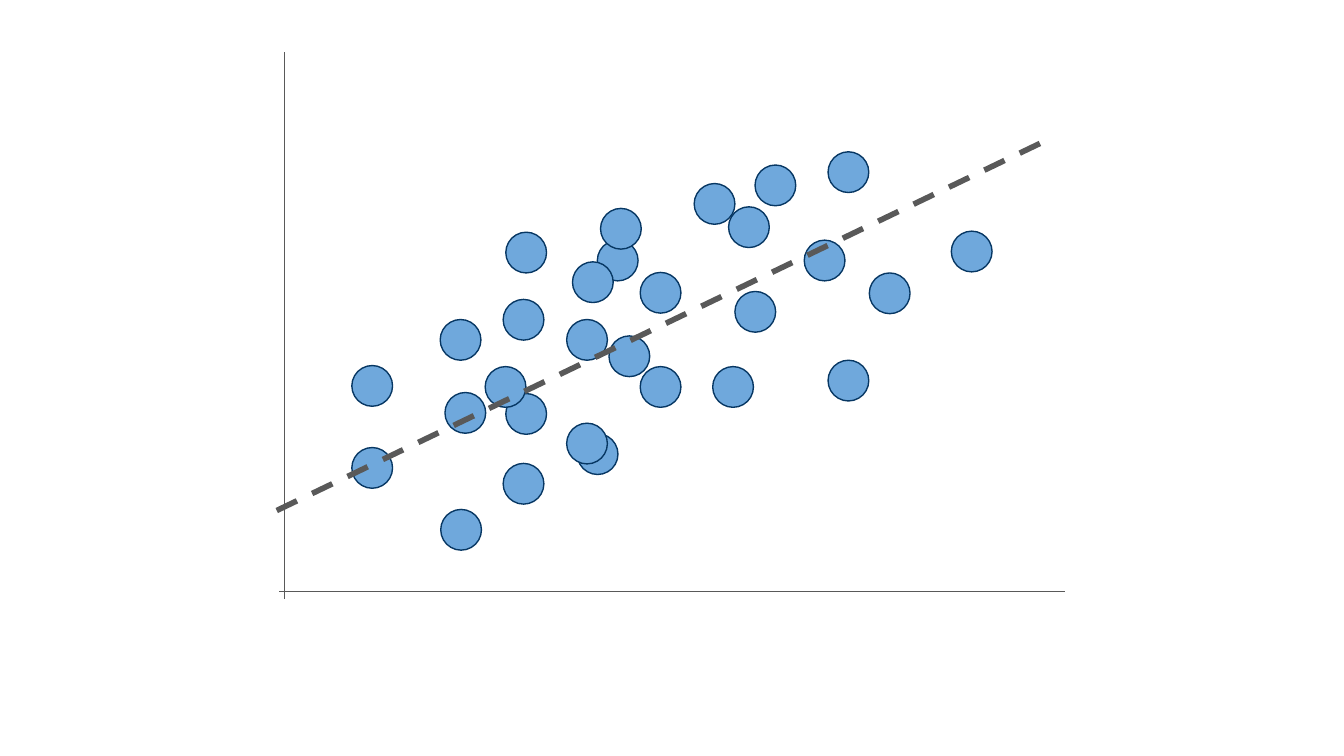
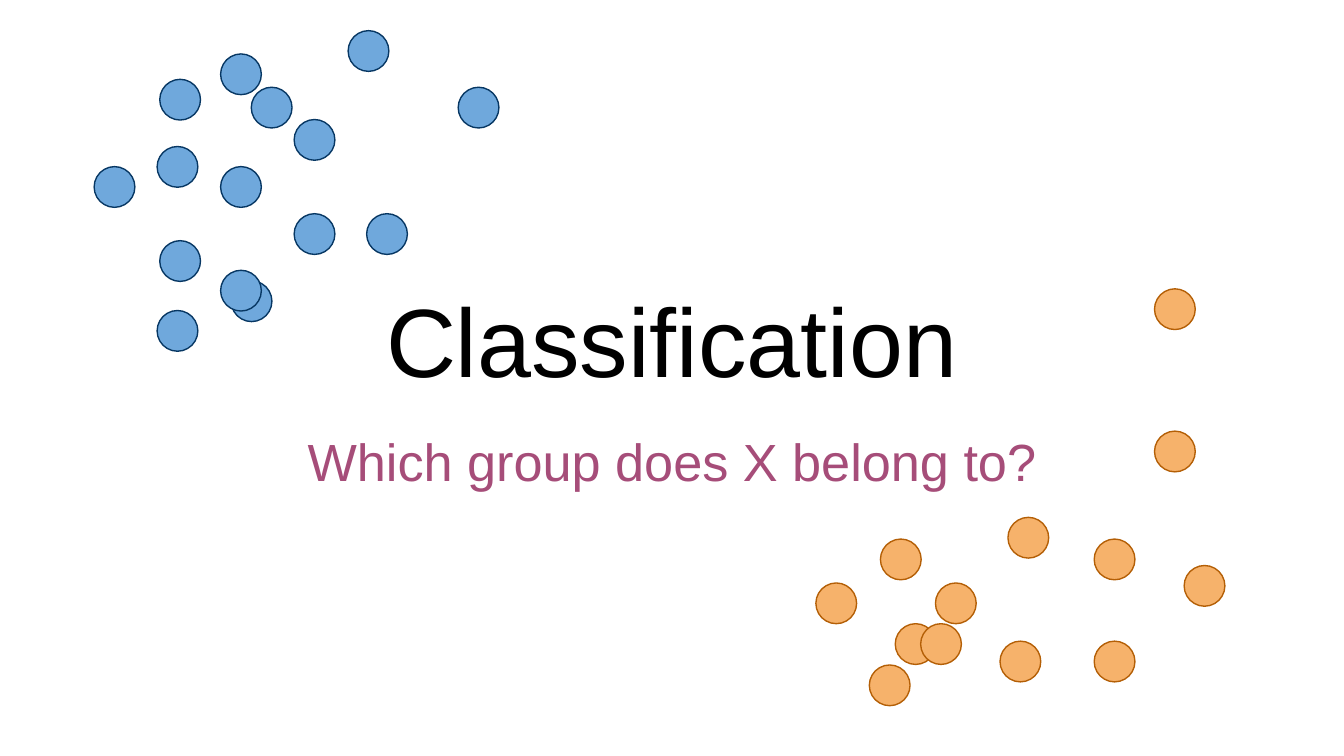
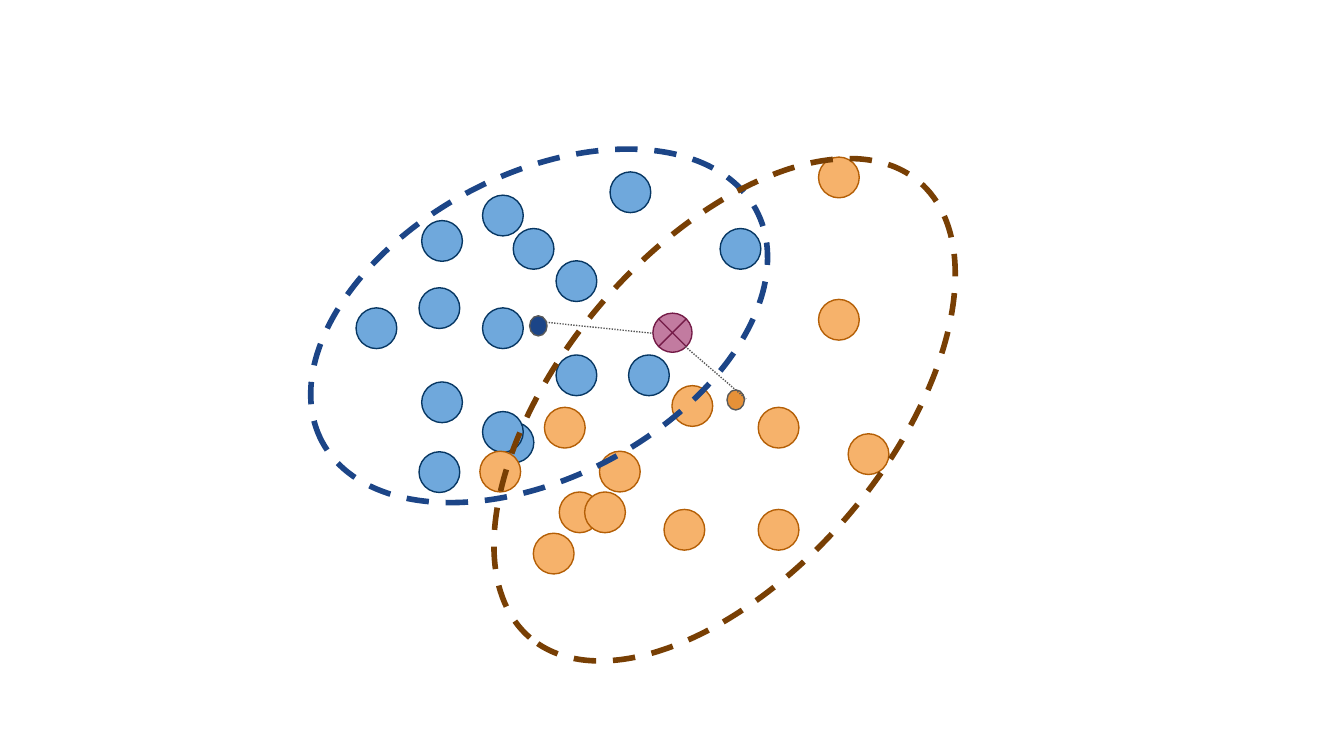
"""Build three slides on regression and classification with dot clusters."""
from lxml import etree
from pptx import Presentation
from pptx.dml.color import RGBColor
from pptx.enum import dml, shapes, text
from pptx.oxml import ns
from pptx.util import Cm, Pt

COLORS = {
    "blue": "6FA8DC", "blue_line": "073763", "navy": "1C4587",
    "orange": "F6B26B", "orange_line": "B45F06", "amber": "E69138", "brown": "783F04",
    "pink": "C27BA0", "pink_line": "741B47", "plum": "A64D79",
    "gray": "595959", "black": "000000",
}
RGB = {name: RGBColor.from_string(value) for name, value in COLORS.items()}
FONT = "Arial"
DOT = 0.77
DASH = dml.MSO_LINE.DASH
DOTTED = dml.MSO_LINE.ROUND_DOT
OVAL = shapes.MSO_SHAPE.OVAL

BLUE_DOTS = [
    (3.02, 1.5), (4.17, 3.15), (1.78, 3.15), (3.02, 4.55), (4.75, 1.65),
    (2.97, 2.77), (5.56, 4.04), (6.93, 4.04), (4.37, 5.31), (2.97, 5.87),
    (4.17, 5.11), (5.56, 2.26), (6.58, 0.58), (8.66, 1.65), (4.17, 1.02),
]
ORANGE_DOTS = [
    (15.42, 11.02), (16.92, 11.79), (16.64, 10.19), (16.43, 12.57), (17.4, 11.79),
    (17.68, 11.02), (19.05, 9.78), (18.9, 12.12), (20.68, 10.19), (20.68, 12.12),
    (21.82, 5.46), (21.82, 8.15), (22.38, 10.69),
]
TREND_DOTS = [
    (8.33, 9.63), (13.89, 5.51), (14.27, 3.12), (16.43, 5.16), (17.98, 4.37),
    (15.65, 2.87), (6.65, 6.91), (8.41, 7.42), (6.65, 8.46), (9.17, 6.93),
    (13.77, 3.91), (15.65, 6.81), (11.51, 6.35), (10.82, 4.95), (11.35, 3.94),
]


def add_mark(parent, kind, x, y, w, h, fill, line, width=0.75):
    sp = parent.add_shape(kind, Cm(x), Cm(y), Cm(w), Cm(h))
    sp.shadow.inherit = False
    if fill:
        sp.fill.solid()
        sp.fill.fore_color.rgb = RGB[fill]
    else:
        sp.fill.background()
    sp.line.color.rgb = RGB[line]
    sp.line.width = Pt(width)
    return sp


def add_line(s, x1, y1, x2, y2, width=0.75, dash=None):
    ln = s.shapes.add_connector(shapes.MSO_CONNECTOR.STRAIGHT, Cm(x1), Cm(y1), Cm(x2), Cm(y2))
    ln.line.color.rgb = RGB["gray"]
    ln.line.width = Pt(width)
    if dash:
        ln.line.dash_style = dash
    etree.SubElement(ln._element.spPr, ns.qn("a:effectLst"))


prs = Presentation()
prs.slide_width, prs.slide_height = Cm(25.4), Cm(14.29)
title_only, blank = prs.slide_layouts[5], prs.slide_layouts[6]

s = prs.slides.add_slide(blank)
shifted = [(x + 6.54, y + 2.89) for x, y in BLUE_DOTS[:-1]]
for x, y in shifted + TREND_DOTS:
    add_mark(s.shapes, OVAL, x, y, DOT, DOT, "blue", "blue_line")
add_line(s, 5.38, 0.99, 5.38, 11.33)
add_line(s, 5.28, 11.18, 20.12, 11.18)
add_line(s, 5.23, 9.65, 19.74, 2.67, 3, DASH)

s = prs.slides.add_slide(title_only)
title = s.shapes.title
title.left, title.top, title.width, title.height = Cm(0.86), Cm(2.06), Cm(23.67), Cm(5.69)
subtitle = s.shapes.add_textbox(Cm(0.86), Cm(7.87), Cm(23.67), Cm(2.21))
for sp, words, size, color, anchor in [
    (title, "Classification", 52, "black", text.MSO_ANCHOR.BOTTOM),
    (subtitle, "Which group does X belong to?", 28, "plum", text.MSO_ANCHOR.TOP),
]:
    tf = sp.text_frame
    tf.text = words
    tf.word_wrap = True
    tf.auto_size = text.MSO_AUTO_SIZE.NONE
    tf.vertical_anchor = anchor
    tf.margin_left = tf.margin_right = tf.margin_top = tf.margin_bottom = Cm(0.25)
    p = tf.paragraphs[0]
    p.alignment = text.PP_ALIGN.CENTER
    p.font.name, p.font.size, p.font.color.rgb = FONT, Pt(size), RGB[color]
for color, dots in [("blue", BLUE_DOTS), ("orange", ORANGE_DOTS)]:
    for x, y in dots:
        add_mark(s.shapes, OVAL, x, y, DOT, DOT, color, color + "_line")

s = prs.slides.add_slide(blank)
for color, dots, dx, dy in [
    ("blue", BLUE_DOTS, 4.95, 2.67),
    ("orange", ORANGE_DOTS, -6.35, -2.49),
]:
    cluster = s.shapes.add_group_shape()
    for x, y in dots:
        add_mark(cluster.shapes, OVAL, x + dx, y + dy, DOT, DOT, color, color + "_line")
for x, y, w, h, angle, color in [
    (5.54, 3.3, 9.3, 5.72, 331.9, "navy"),
    (8.03, 4.67, 11.33, 6.15, 310.5, "brown"),
]:
    boundary = add_mark(s.shapes, shapes.MSO_SHAPE.FLOWCHART_CONNECTOR, x, y, w, h, None, color, 3)
    boundary.rotation = angle
    boundary.line.dash_style = DASH
add_mark(s.shapes, shapes.MSO_SHAPE.FLOWCHART_SUMMING_JUNCTION,
         12.34, 5.92, 0.74, 0.74, "pink", "pink_line")
add_line(s, 10.11, 6.07, 12.34, 6.3, dash=DOTTED)
for x, y, color in [(10.01, 5.97, "navy"), (13.74, 7.37, "amber")]:
    add_mark(s.shapes, OVAL, x, y, 0.33, 0.38, color, "gray")
add_line(s, 12.95, 6.55, 14.1, 7.54, dash=DOTTED)

prs.save("out.pptx")
